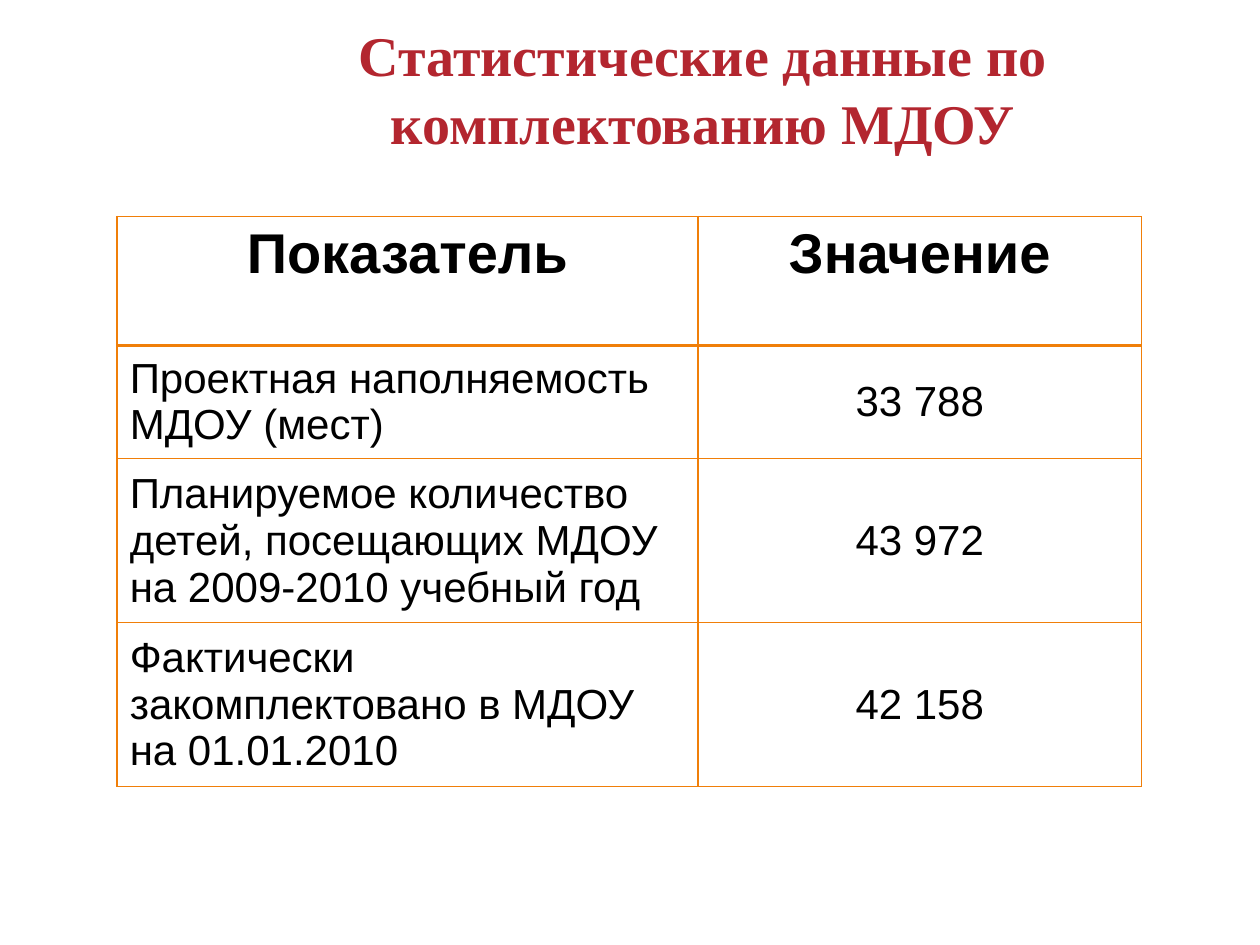
from typing import NamedTuple

from lxml.etree import SubElement
from pptx import Presentation
from pptx.dml.color import RGBColor
from pptx.enum.text import MSO_ANCHOR as Anchor, PP_ALIGN as Align
from pptx.oxml.ns import qn
from pptx.util import Inches, Pt

COLORS = {"title": "B3262F", "text": "000000", "border": "F07F09"}


class TableRow(NamedTuple):
    label: str
    value: str
    height: float


HEADER = TableRow("Показатель", "Значение", 1.02)
INDICATORS = [
    TableRow("Проектная наполняемость МДОУ (мест)", "33 788", 0.81),
    TableRow("Планируемое количество детей, посещающих МДОУ на 2009-2010 учебный год",
             "43 972", 0.78),
    TableRow("Фактически закомплектовано в МДОУ на 01.01.2010", "42 158", 0.78),
]
COLUMN_WIDTHS = [4.61, 3.52]


def write_text(text_frame, text: str, *, size: float, font: str = "Arial",
               color: str = "text", bold: bool = False, align=Align.LEFT) -> None:
    paragraph = text_frame.paragraphs[0]
    paragraph.alignment = align
    run = paragraph.add_run()
    run.text = text
    run.font.name = font
    run.font.size = Pt(size)
    run.font.bold = bold
    run.font.color.rgb = RGBColor.from_string(COLORS[color])


def set_borders(cell, **widths: float) -> None:
    """Draw the cell's four sides; must come before the fill in the XML."""
    properties = cell._tc.get_or_add_tcPr()
    for side in ("L", "R", "T", "B"):
        line = SubElement(properties, qn(f"a:ln{side}"), w=str(Pt(widths.get(side, 1))))
        fill = SubElement(line, qn("a:solidFill"))
        SubElement(fill, qn("a:srgbClr"), val=COLORS["border"])


def add_title(slide, text: str) -> None:
    box = slide.shapes.add_textbox(Inches(1.48), Inches(0.23), Inches(8.2), Inches(0.94))
    box.text_frame.word_wrap = True
    box.text_frame.vertical_anchor = Anchor.MIDDLE
    write_text(box.text_frame, text, size=32, font="Times New Roman",
               color="title", bold=True, align=Align.CENTER)


def add_indicator_table(slide, rows: list[TableRow]) -> None:
    frame = slide.shapes.add_table(
        len(rows), len(COLUMN_WIDTHS), Inches(0.93), Inches(1.72),
        Inches(sum(COLUMN_WIDTHS)), Inches(sum(row.height for row in rows)))
    table = frame.table
    table.horz_banding = False
    for column, width in zip(table.columns, COLUMN_WIDTHS):
        column.width = Inches(width)
    for row_index, row in enumerate(rows):
        table.rows[row_index].height = Inches(row.height)
        is_header = row_index == 0
        for column_index, text in enumerate((row.label, row.value)):
            cell = table.cell(row_index, column_index)
            cell.vertical_anchor = Anchor.TOP if is_header else Anchor.MIDDLE
            set_borders(cell, B=2 if is_header else 1, T=2 if row_index == 1 else 1)
            cell.fill.background()
            centered = is_header or column_index == 1
            write_text(cell.text_frame, text, size=32 if is_header else 24,
                       bold=is_header, align=Align.CENTER if centered else Align.LEFT)


def main() -> None:
    presentation = Presentation()
    presentation.slide_width = Inches(10)
    presentation.slide_height = Inches(7.5)
    slide = presentation.slides.add_slide(presentation.slide_layouts[6])
    # Heading
    add_title(slide, "Статистические данные по комплектованию МДОУ")
    # Enrolment figures
    add_indicator_table(slide, [HEADER, *INDICATORS])
    presentation.save("out.pptx")


if __name__ == "__main__":
    main()
